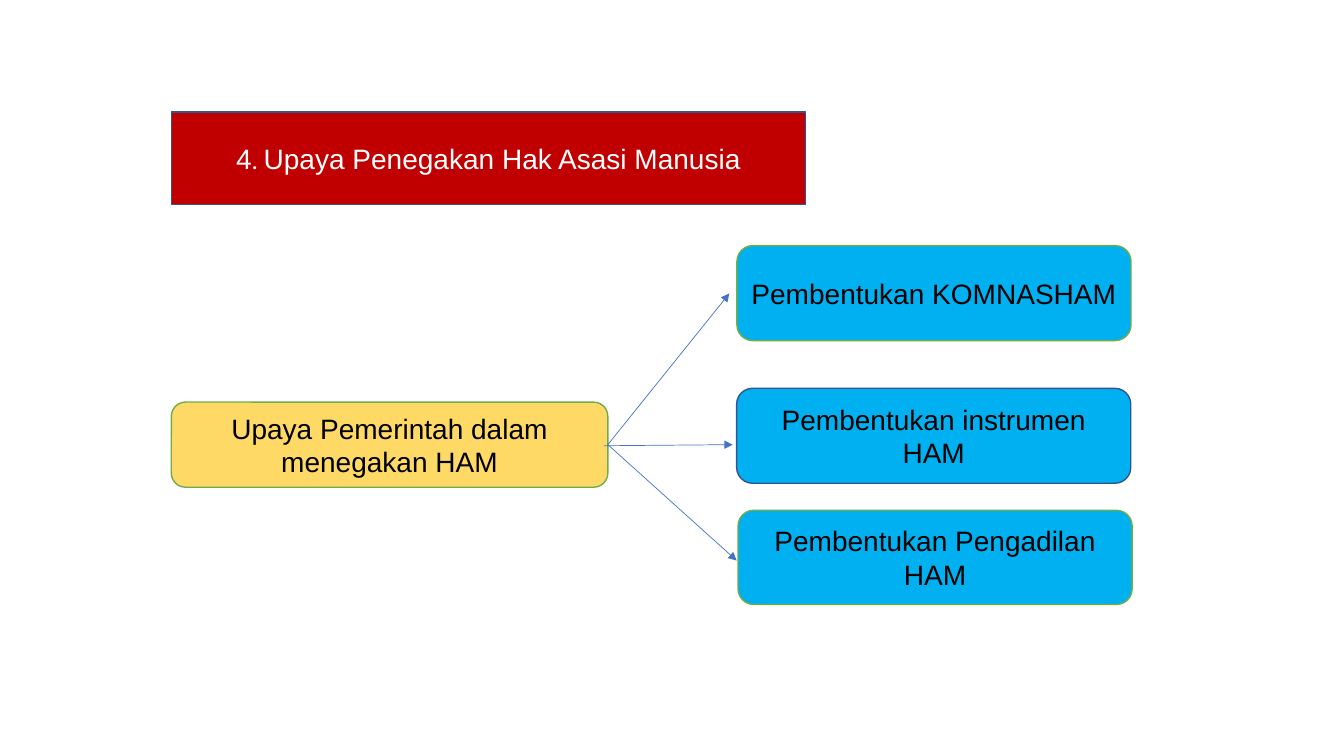
from lxml.etree import SubElement
from pptx import Presentation
from pptx.dml.color import RGBColor
from pptx.enum.shapes import MSO_CONNECTOR, MSO_SHAPE
from pptx.enum.text import MSO_ANCHOR, MSO_AUTO_SIZE, PP_ALIGN
from pptx.oxml.ns import qn
from pptx.util import Pt

COLORS = {"red": "C00000", "yellow": "FFD966", "cyan": "00B0F0", "navy": "325491",
          "green": "70AD47", "arrow": "4472C4", "white": "FFFFFF", "black": "000000"}


def color(name):
    """Return the named colour."""
    return RGBColor.from_string(COLORS[name])


def style_box(sp, fill, line, text_color, align):
    """Give a box its fill, outline and text format."""
    sp.fill.solid()
    sp.fill.fore_color.rgb = color(fill)
    sp.line.color.rgb = color(line)
    sp.line.width = Pt(1)
    tf = sp.text_frame
    tf.word_wrap = True
    tf.auto_size = MSO_AUTO_SIZE.NONE
    tf.vertical_anchor = MSO_ANCHOR.MIDDLE
    p = tf.paragraphs[0]
    p.alignment = align
    p.font.name = "Arial"
    p.font.size = Pt(20)
    p.font.color.rgb = color(text_color)


prs = Presentation()
prs.slide_width, prs.slide_height = Pt(960), Pt(540)
s = prs.slides.add_slide(prs.slide_layouts[5])

# Title: the placeholder as a rounded box
title = s.shapes.title
title.left, title.top, title.width, title.height = Pt(122.4), Pt(80), Pt(453), Pt(66.2)
geom = SubElement(title._element.spPr, qn("a:prstGeom"), prst="roundRect")
SubElement(geom, qn("a:avLst"))
p = title.text_frame.paragraphs[0]
for text in ("4", ". ", "Upaya Penegakan Hak Asasi Manusia"):
    r = p.add_run()
    r.text = text
    if text == ". ":
        r.font.name, r.font.size = "Calibri", Pt(18)
style_box(title, "red", "navy", "white", PP_ALIGN.CENTER)

# Government effort and its three results
boxes = [
    ("Upaya Pemerintah dalam menegakan HAM",
     122.4, 287.2, 311.8, 60.8, "yellow", "green", PP_ALIGN.CENTER),
    ("Pembentukan KOMNASHAM",
     526.4, 175.5, 281.5, 67.8, "cyan", "green", PP_ALIGN.LEFT),
    ("Pembentukan instrumen HAM",
     526.2, 277.4, 281.5, 67.8, "cyan", "navy", PP_ALIGN.CENTER),
    ("Pembentukan Pengadilan HAM",
     527.2, 364.5, 281.5, 67.3, "cyan", "green", PP_ALIGN.CENTER),
]
for text, x, y, w, h, fill, line, align in boxes:
    sp = s.shapes.add_shape(MSO_SHAPE.ROUNDED_RECTANGLE, Pt(x), Pt(y), Pt(w), Pt(h))
    sp.shadow.inherit = False
    sp.text_frame.text = text
    style_box(sp, fill, line, "black", align)

# Arrows from the effort to each result
arrows = [(434.2, 317.6, 521, 209.6), (431.3, 318.4, 523.4, 317.6),
          (434.2, 317.6, 526.2, 400.4)]
for ends in arrows:
    cn = s.shapes.add_connector(MSO_CONNECTOR.STRAIGHT, *map(Pt, ends))
    cn.line.color.rgb = color("arrow")
    cn.line.width = Pt(0.5)
    SubElement(cn.line._get_or_add_ln(), qn("a:tailEnd"), type="triangle")
    SubElement(cn._element.spPr, qn("a:effectLst"))

prs.save("out.pptx")
